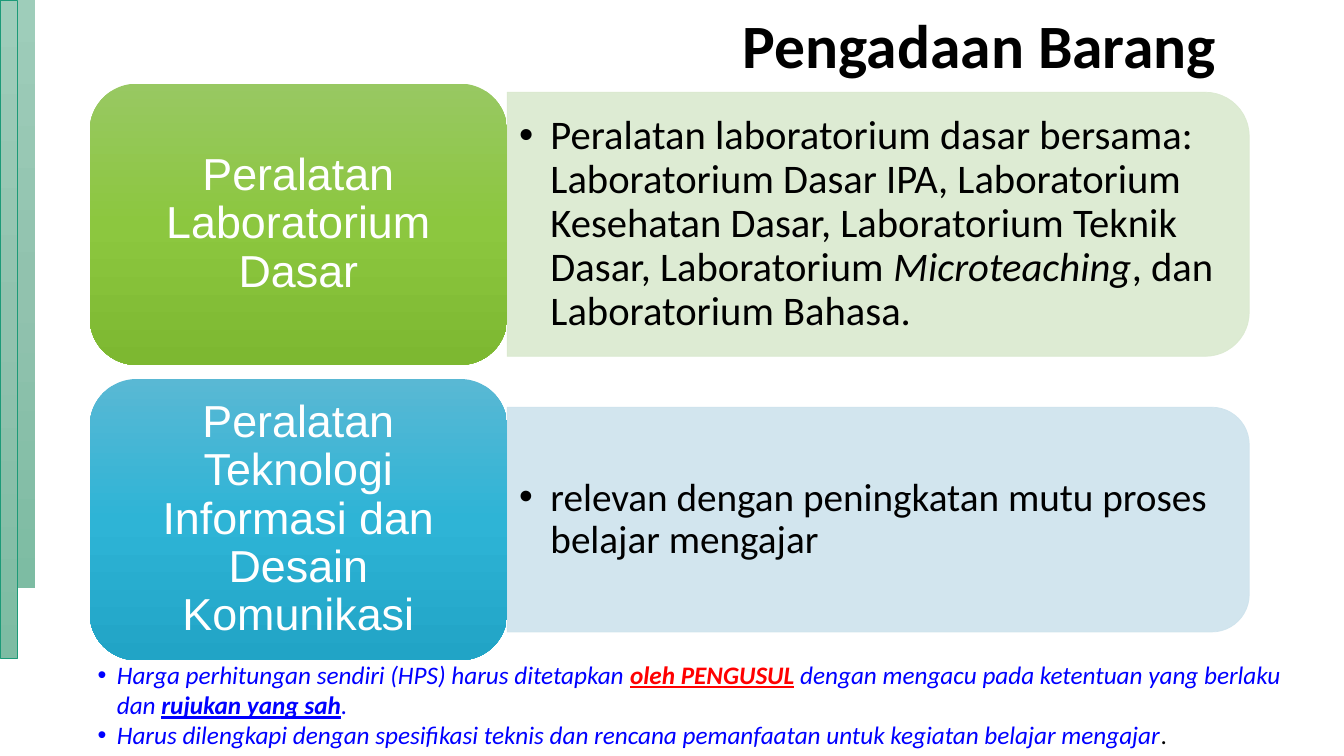
from copy import deepcopy
from dataclasses import dataclass

from lxml.etree import SubElement
from pptx import Presentation
from pptx.dml.color import RGBColor
from pptx.enum.shapes import MSO_SHAPE as Kind
from pptx.enum.text import MSO_ANCHOR as Anchor, MSO_AUTO_SIZE as Fit, PP_ALIGN as Align
from pptx.oxml.ns import qn
from pptx.shapes.autoshape import Shape
from pptx.slide import Slide
from pptx.text.text import TextFrame, _Paragraph as Para
from pptx.util import Inches, Pt


# Colours and type sizes
@dataclass(frozen=True)
class Theme:
    head: str = "Calibri"
    label: str = "Arial"
    black: str = "000000"
    white: str = "FFFFFF"
    blue: str = "0000FF"
    red: str = "FF0000"
    edge: str = "1D9A78"
    mint: tuple[str, ...] = ("9ECDBA", "91C2AE", "7DBCA3")
    green: tuple[str, ...] = ("98C862", "8CC73F", "7DB831")
    cyan: tuple[str, ...] = ("59B8D4", "2EB4D6", "21A4C6")
    pale_green: str = "DAE9CF"
    pale_blue: str = "CEE3ED"
    title_size: int = 44
    label_size: int = 32
    note_size: int = 18


T = Theme()


@dataclass(frozen=True)
class Span:
    text: str
    color: str = T.black
    bold: bool = False
    italic: bool = False
    under: bool = False


@dataclass(frozen=True)
class Row:
    label: str
    stops: tuple[str, ...]
    pale: str
    height: float
    size: int
    spans: tuple[Span, ...]


# Content
ROWS = (
    Row("Peralatan Laboratorium Dasar", T.green, T.pale_green, 2.62, 29, (
        Span("Peralatan laboratorium dasar bersama: Laboratorium Dasar IPA, "
             "Laboratorium Kesehatan Dasar, Laboratorium Teknik Dasar, Laboratorium "),
        Span("Microteaching", italic=True),
        Span(", dan Laboratorium Bahasa."))),
    Row("Peralatan Teknologi Informasi dan Desain Komunikasi", T.cyan, T.pale_blue, 2.23, 28, (
        Span("relevan dengan peningkatan mutu proses belajar mengajar"),)),
)
NOTES = (
    (Span("Harga perhitungan sendiri (HPS) harus ditetapkan ", T.blue, italic=True),
     Span("oleh PENGUSUL", T.red, True, True, True),
     Span(" ", T.red, True, True),
     Span("dengan mengacu pada ketentuan yang berlaku dan ", T.blue, italic=True),
     Span("rujukan yang sah", T.blue, True, True, True),
     Span(".", T.blue, italic=True)),
    (Span("Harus dilengkapi dengan spesifikasi teknis dan rencana pemanfaatan "
          "untuk kegiatan belajar mengajar", T.blue, italic=True),
     Span(".", italic=True)),
)

# Grid of the two rows
LEFT, TOP, WIDE, TALL, STEP = 0.89, 0.83, 4.14, 2.79, 2.93
PANEL = 7.36


def rgb(code: str) -> RGBColor:
    return RGBColor.from_string(code)


def write(para: Para, spans: tuple[Span, ...], font: str, size: float) -> None:
    for span in spans:
        run = para.add_run()
        run.text = span.text
        face = run.font
        face.name, face.size = font, Pt(size)
        face.bold, face.italic, face.underline = span.bold, span.italic, span.under
        face.color.rgb = rgb(span.color)


def bullet(para: Para, indent: float) -> None:
    props = para._p.get_or_add_pPr()
    props.set("marL", str(Inches(indent)))
    props.set("indent", str(-Inches(indent)))
    SubElement(props, qn("a:buFont"), typeface="Arial")
    SubElement(props, qn("a:buChar"), char="•")


def inset(frame: TextFrame, side: float, end: float) -> None:
    frame.word_wrap = True
    frame.vertical_anchor = Anchor.MIDDLE
    frame.margin_left = frame.margin_right = Inches(side)
    frame.margin_top = frame.margin_bottom = Inches(end)


def block(slide: Slide, kind: Kind, left: float, top: float, wide: float, tall: float) -> Shape:
    shape = slide.shapes.add_shape(kind, Inches(left), Inches(top), Inches(wide), Inches(tall))
    shape.shadow.inherit = False
    shape.line.fill.background()
    return shape


def shade(shape: Shape, stops: tuple[str, ...]) -> None:
    fill = shape.fill
    fill.gradient()
    fill.gradient_angle = 270
    first = shape.element.find(".//" + qn("a:gs"))
    first.addnext(deepcopy(first))
    for i, (stop, code) in enumerate(zip(fill.gradient_stops, stops)):
        stop.position = i / (len(stops) - 1)
        stop.color.rgb = rgb(code)


def panel(slide: Slide, row: Row, mid: float) -> None:
    # Turned a quarter so that the round corners face right
    left = LEFT + WIDE + (PANEL - row.height) / 2
    shape = block(slide, Kind.ROUND_2_SAME_RECTANGLE, left, mid - PANEL / 2, row.height, PANEL)
    shape.rotation = 90
    shape.fill.solid()
    shape.fill.fore_color.rgb = rgb(row.pale)
    shape.line.color.rgb = rgb(row.pale)
    shape.line.width = Pt(0.5)
    for color in shape.element.spPr.iter(qn("a:srgbClr")):
        SubElement(color, qn("a:alpha"), val="90000")

    tall = row.height * 0.9
    box = slide.shapes.add_textbox(Inches(LEFT + WIDE), Inches(mid - tall / 2),
                                   Inches(7.24), Inches(tall))
    inset(box.text_frame, 0.12, 0.06)
    para = box.text_frame.paragraphs[0]
    bullet(para, 0.31)
    para.level = 1
    para.line_spacing = 0.9
    write(para, row.spans, T.head, row.size)


def card(slide: Slide, row: Row, top: float) -> None:
    shape = block(slide, Kind.ROUNDED_RECTANGLE, LEFT, top, WIDE, TALL)
    shade(shape, row.stops)
    inset(shape.text_frame, 0.13, 0.07)
    para = shape.text_frame.paragraphs[0]
    para.alignment = Align.CENTER
    para.line_spacing = 0.9
    write(para, (Span(row.label, T.white),), T.label, T.label_size)


def main() -> None:
    deck = Presentation()
    deck.slide_width, deck.slide_height = Inches(13.33), Inches(7.5)
    slide = deck.slides.add_slide(deck.slide_layouts[5])

    # Side bars
    shade(block(slide, Kind.RECTANGLE, 0.18, 0, 0.17, 5.83), T.mint)
    bar = block(slide, Kind.RECTANGLE, 0, 0, 0.17, 6.53)
    shade(bar, T.mint)
    bar.line.color.rgb = rgb(T.edge)
    bar.line.width = Pt(0.5)

    # Title
    title = slide.shapes.title
    title.left, title.top = Inches(0.67), Inches(0.04)
    title.width, title.height = Inches(11.5), Inches(0.88)
    inset(title.text_frame, 0.1, 0.05)
    para = title.text_frame.paragraphs[0]
    para.alignment = Align.RIGHT
    para.line_spacing = 0.9
    write(para, (Span("Pengadaan Barang", bold=True),), T.head, T.title_size)

    # Rows
    for i, row in enumerate(ROWS):
        top = TOP + i * STEP
        panel(slide, row, top + TALL / 2)
        card(slide, row, top)

    # Notes
    box = slide.shapes.add_textbox(Inches(0.87), Inches(6.49), Inches(12.19), Inches(1.01))
    frame = box.text_frame
    frame.word_wrap = True
    frame.auto_size = Fit.SHAPE_TO_FIT_TEXT
    for i, spans in enumerate(NOTES):
        para = frame.add_paragraph() if i else frame.paragraphs[0]
        bullet(para, 0.19)
        write(para, spans, T.head, T.note_size)

    deck.save("out.pptx")


if __name__ == "__main__":
    main()
